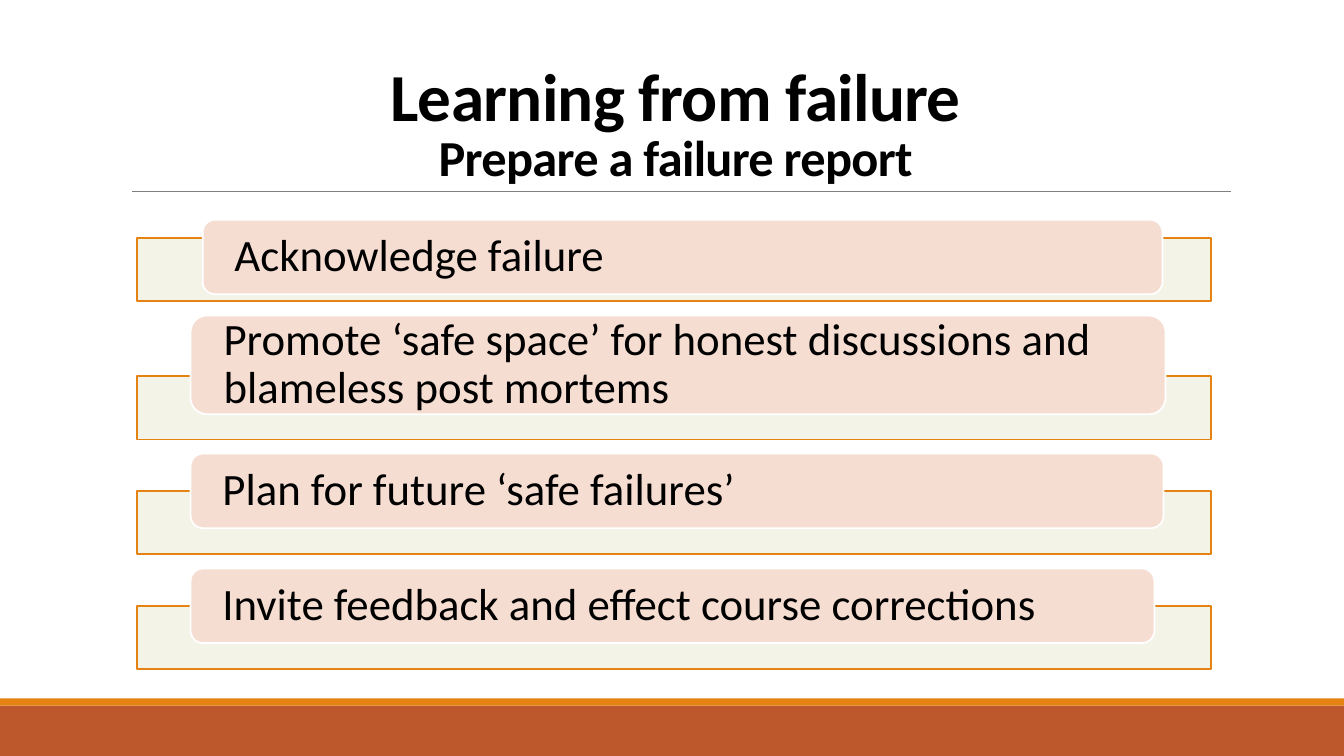
from lxml.etree import SubElement
from pptx import Presentation
from pptx.dml.color import RGBColor
from pptx.enum.shapes import MSO_CONNECTOR, MSO_SHAPE
from pptx.enum.text import MSO_ANCHOR, MSO_AUTO_SIZE, PP_ALIGN
from pptx.oxml.ns import qn
from pptx.util import Pt

PX = 9144  # EMU per px, 100 px to the inch
FONT = "Calibri"
COLORS = {
    "text": "000000", "white": "FFFFFF", "rule": "808080",
    "footer": "BD582C", "orange": "E48312",
    "band": "F3F2E6", "label": "F5DDD2",
}


def write(frame, lines, sizes, align=PP_ALIGN.LEFT, anchor=MSO_ANCHOR.MIDDLE,
          bold=False, line_spacing=0.9, tracking=0, insets=(28, 0)):
    """Write lines into one paragraph, parted by line breaks."""
    frame.word_wrap = True
    frame.auto_size = MSO_AUTO_SIZE.NONE
    frame.vertical_anchor = anchor
    frame.margin_left = frame.margin_right = insets[0] * PX
    frame.margin_top = frame.margin_bottom = insets[1] * PX
    paragraph = frame.paragraphs[0]
    paragraph.alignment = align
    paragraph.line_spacing = line_spacing
    for index, (line, size) in enumerate(zip(lines, sizes)):
        if index:
            paragraph.add_line_break()
        run = paragraph.add_run()
        run.text = line
        run.font.name = FONT
        run.font.size = Pt(size)
        run.font.bold = bold
        run.font.color.rgb = RGBColor.from_string(COLORS["text"])
        if tracking:
            run.font._element.set("spc", str(tracking))


def add_box(kind, left, top, width, height, fill, line=None):
    shape = slide.shapes.add_shape(kind, left * PX, top * PX, width * PX, height * PX)
    shape.shadow.inherit = False
    shape.fill.solid()
    shape.fill.fore_color.rgb = RGBColor.from_string(COLORS[fill])
    if line:
        shape.line.color.rgb = RGBColor.from_string(COLORS[line])
        shape.line.width = Pt(1.25)
    else:
        shape.line.fill.background()
    return shape


presentation = Presentation()
presentation.slide_width = 1333 * PX
presentation.slide_height = 750 * PX
slide = presentation.slides.add_slide(presentation.slide_layouts[5])

# Footer bands
add_box(MSO_SHAPE.RECTANGLE, 0, 700, 1333, 50, "footer")
add_box(MSO_SHAPE.RECTANGLE, 0, 693, 1333, 7, "orange")

# Rule under the title
rule = slide.shapes.add_connector(
    MSO_CONNECTOR.STRAIGHT, 131 * PX, 190 * PX, 1221 * PX, 190 * PX)
rule.line.color.rgb = RGBColor.from_string(COLORS["rule"])
rule.line.width = Pt(0.5)
SubElement(rule._element.spPr, qn("a:effectLst"))

# Title
title = slide.shapes.title
title.left, title.top = 120 * PX, 31 * PX
title.width, title.height = 1100 * PX, 159 * PX
write(title.text_frame, ["Learning from failure", "Prepare a failure report"], [48, 36],
      align=PP_ALIGN.CENTER, anchor=MSO_ANCHOR.BOTTOM, bold=True,
      line_spacing=0.85, tracking=-50, insets=(10, 5))

# Steps: band top, then label left, top, width, height and text
steps = [
    (236, 201, 218, 952, 74, "Acknowledge failure"),
    (373, 189, 313, 967, 98,
     "Promote ‘safe space’ for honest discussions and blameless post mortems"),
    (487, 189, 450, 965, 74, "Plan for future ‘safe failures’"),
    (601, 189, 564, 956, 74, "Invite feedback and effect course corrections"),
]
for band_top, left, top, width, height, text in steps:
    band = add_box(MSO_SHAPE.RECTANGLE, 136, band_top, 1065, 63, "band", "orange")
    band_color = band._element.spPr.find(qn("a:solidFill")).find(qn("a:srgbClr"))
    SubElement(band_color, qn("a:alpha"), val="90000")
    label = add_box(MSO_SHAPE.ROUNDED_RECTANGLE, left, top, width, height, "label", "white")
    write(label.text_frame, [text], [32])

presentation.save("out.pptx")
